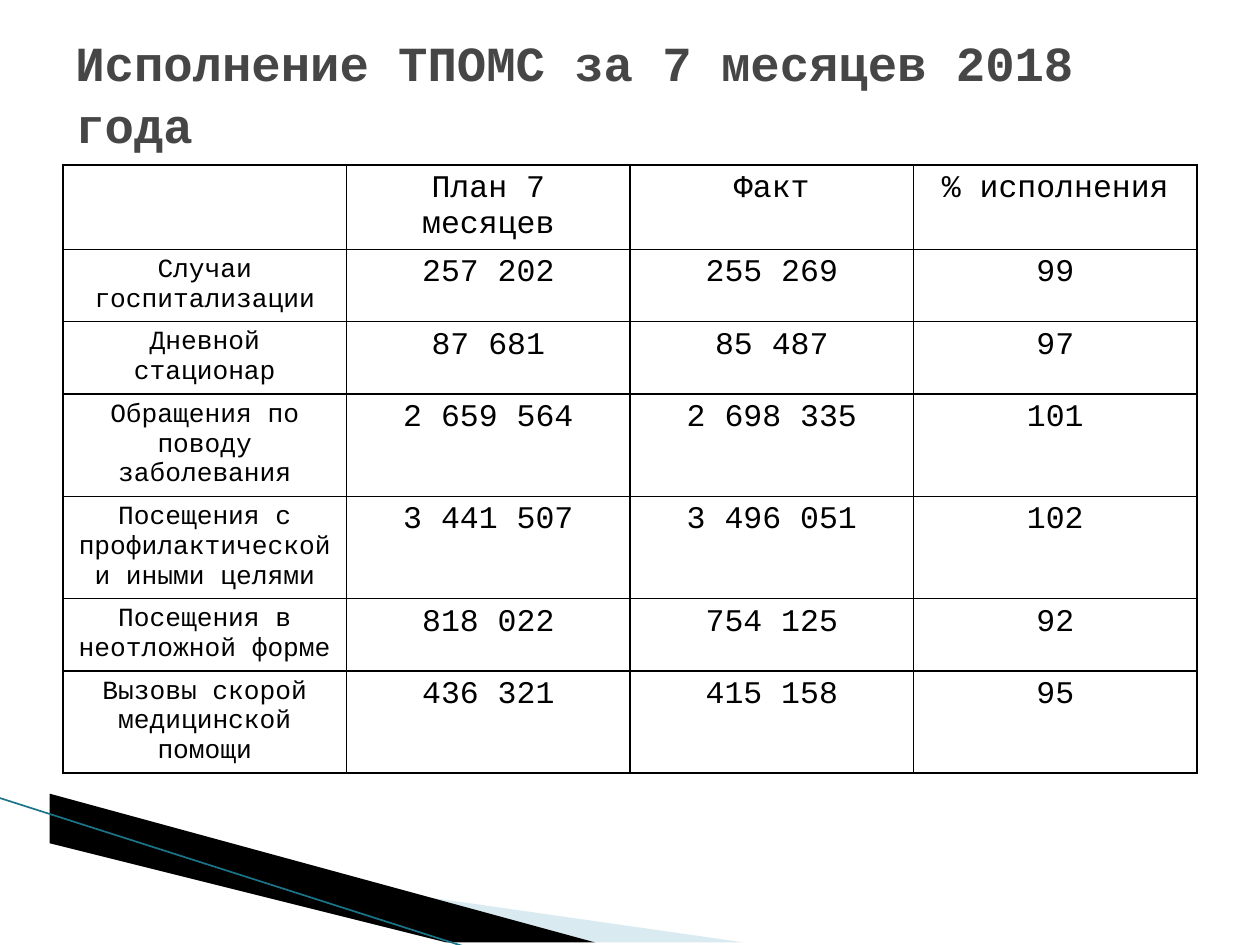
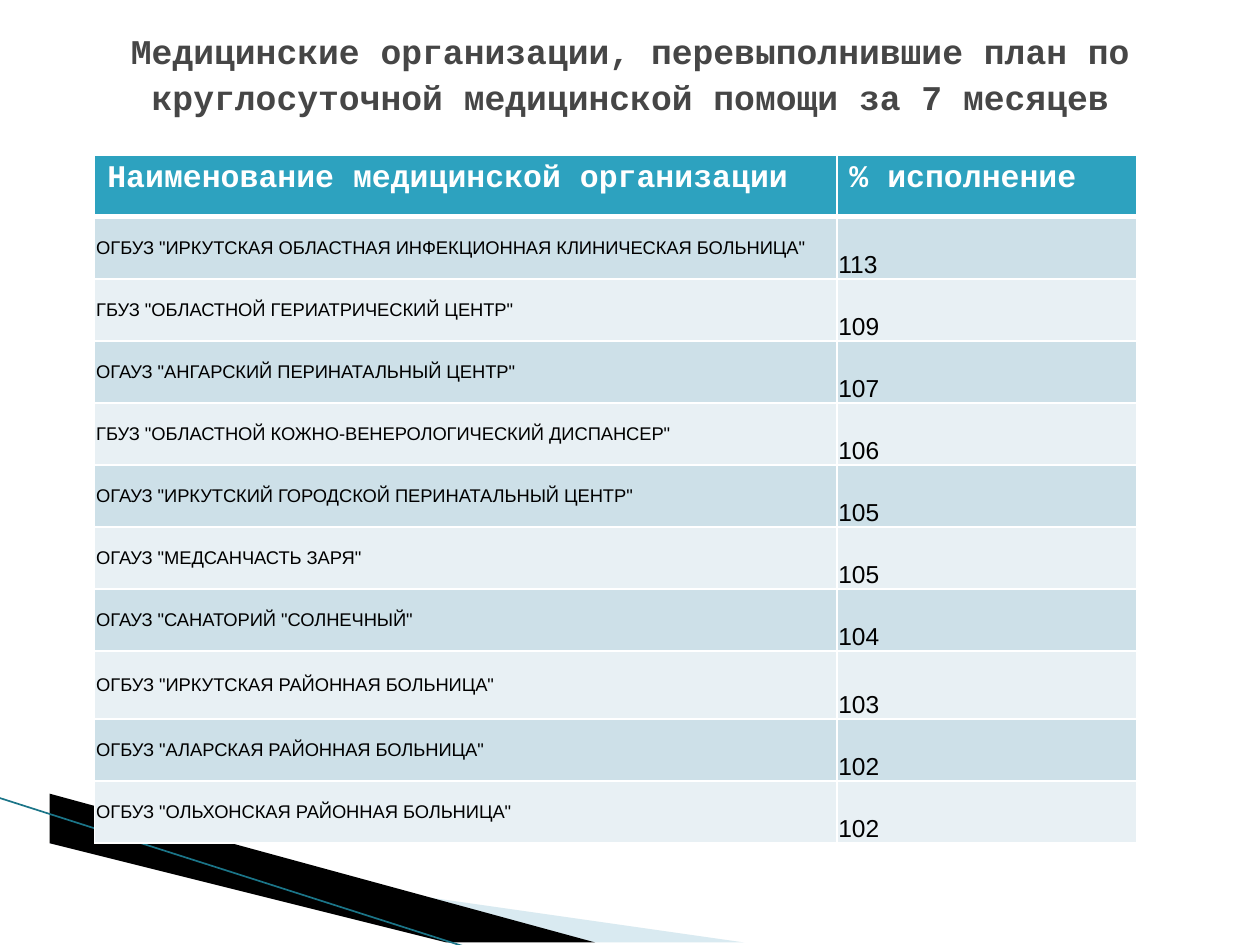
import pptx
import pptx.dml.color
import pptx.enum.shapes
import pptx.enum.text
import pptx.oxml.ns
import pptx.util
from lxml import etree

Cm = pptx.util.Cm
Pt = pptx.util.Pt
RGBColor = pptx.dml.color.RGBColor
Align = pptx.enum.text.PP_ALIGN
Anchor = pptx.enum.text.MSO_ANCHOR
qn = pptx.oxml.ns.qn

BLACK = RGBColor(0x00, 0x00, 0x00)
WHITE = RGBColor(0xFF, 0xFF, 0xFF)
TITLE_GREY = RGBColor(0x46, 0x46, 0x46)
PALE_BLUE = RGBColor(0xA0, 0xCB, 0xDC)
EDGE_TEAL = RGBColor(0x1B, 0x75, 0x88)
HEADER_TEAL = RGBColor(0x2D, 0xA2, 0xBF)
BAND_DARK = RGBColor(0xCD, 0xE0, 0xE8)
BAND_LIGHT = RGBColor(0xE8, 0xF0, 0xF4)

MONO = "Courier New"
SANS = "Arial"

PALE_WEDGE = [(1.4, 16.53), (15.11, 19.08), (11.58, 19.08), (1.4, 16.51)]
BLACK_WEDGE = [(1.35, 16.48), (11.61, 19.08), (9.45, 19.1), (1.37, 16.51)]

PLAN_HEADER = ["", "План 7 месяцев", "Факт", "% исполнения"]
PLAN_ROWS = [
    ("Случаи госпитализации", "257 202", "255 269", "99"),
    ("Дневной стационар", "87 681", "85 487", "97"),
    ("Обращения по поводу заболевания", "2 659 564", "2 698 335", "101"),
    ("Посещения с профилактической и иными целями", "3 441 507", "3 496 051", "102"),
    ("Посещения в неотложной форме", "818 022", "754 125", "92"),
    ("Вызовы скорой медицинской помощи", "436 321", "415 158", "95"),
]
PLAN_HEIGHTS = [1.69, 1.46, 1.46, 2.06, 2.06, 1.46, 2.06]

HOSPITAL_HEADER = ["Наименование медицинской организации", "% исполнение"]
HOSPITAL_ROWS = [
    ('ОГБУЗ "ИРКУТСКАЯ ОБЛАСТНАЯ ИНФЕКЦИОННАЯ КЛИНИЧЕСКАЯ БОЛЬНИЦА"', "113"),
    ('ГБУЗ "ОБЛАСТНОЙ ГЕРИАТРИЧЕСКИЙ ЦЕНТР"', "109"),
    ('ОГАУЗ "АНГАРСКИЙ ПЕРИНАТАЛЬНЫЙ ЦЕНТР"', "107"),
    ('ГБУЗ "ОБЛАСТНОЙ КОЖНО-ВЕНЕРОЛОГИЧЕСКИЙ ДИСПАНСЕР"', "106"),
    ('ОГАУЗ "ИРКУТСКИЙ ГОРОДСКОЙ ПЕРИНАТАЛЬНЫЙ ЦЕНТР"', "105"),
    ('ОГАУЗ "МЕДСАНЧАСТЬ ЗАРЯ"', "105"),
    ('ОГАУЗ "САНАТОРИЙ "СОЛНЕЧНЫЙ"', "104"),
    ('ОГБУЗ "ИРКУТСКАЯ РАЙОННАЯ БОЛЬНИЦА"', "103"),
    ('ОГБУЗ "АЛАРСКАЯ РАЙОННАЯ БОЛЬНИЦА"', "102"),
    ('ОГБУЗ "ОЛЬХОНСКАЯ РАЙОННАЯ БОЛЬНИЦА"', "102"),
]
HOSPITAL_HEIGHTS = [1.25] * 8 + [1.37] + [1.25] * 2


def write(frame, text, size, font, color, bold=False, align=Align.LEFT):
    """Write one styled run into the first paragraph of a text frame."""
    paragraph = frame.paragraphs[0]
    paragraph.alignment = align
    run = paragraph.add_run()
    run.text = text
    run.font.size = Pt(size)
    run.font.name = font
    run.font.bold = bold
    run.font.color.rgb = color
    return paragraph


def add_wedge(slide, corners, color, opacity=100):
    """Draw a filled outline through corners given in centimetres."""
    builder = slide.shapes.build_freeform(*corners[0], scale=Cm(1))
    builder.add_line_segments(corners[1:], close=True)
    wedge = builder.convert_to_shape()
    wedge.shadow.inherit = False
    wedge.fill.solid()
    wedge.fill.fore_color.rgb = color
    wedge.line.fill.background()
    if opacity < 100:
        tint = wedge.fill._xPr.find(".//" + qn("a:srgbClr"))
        etree.SubElement(tint, qn("a:alpha"), val=str(opacity * 1000))


def add_corner_sweep(slide):
    """Draw the swept decoration in the lower left corner."""
    add_wedge(slide, PALE_WEDGE, PALE_BLUE, opacity=40)
    add_wedge(slide, BLACK_WEDGE, BLACK)
    edge = slide.shapes.add_connector(
        pptx.enum.shapes.MSO_CONNECTOR.STRAIGHT, Cm(-0.03), Cm(16.08), Cm(9.42), Cm(19.1))
    edge.line.color.rgb = EDGE_TEAL
    edge.line.width = Pt(0.95)
    etree.SubElement(edge._element.spPr, qn("a:effectLst"))


def add_title(slide, text, height, size, align, spacing):
    """Place the slide title across the top."""
    title = slide.shapes.add_textbox(Cm(1.27), Cm(0.76), Cm(22.86), Cm(height))
    title.text_frame.word_wrap = True
    title.text_frame.vertical_anchor = Anchor.MIDDLE
    paragraph = write(title.text_frame, text, size, MONO, TITLE_GREY, True, align)
    paragraph.line_spacing = spacing


def set_borders(cell, color, top=1, bottom=1):
    """Rule all four sides of a cell, with widths in points."""
    properties = cell._tc.get_or_add_tcPr()
    for side, width in (("L", 1), ("R", 1), ("T", top), ("B", bottom)):
        rule = etree.SubElement(properties, qn("a:ln" + side), w=str(Pt(width)))
        fill = etree.SubElement(rule, qn("a:solidFill"))
        etree.SubElement(fill, qn("a:srgbClr"), val=str(color))


def add_grid(slide, left, top, widths, heights):
    """Add an unbanded table with the given column widths and row heights."""
    grid = slide.shapes.add_table(
        len(heights), len(widths), Cm(left), Cm(top), Cm(sum(widths)), Cm(sum(heights))).table
    grid.first_row = False
    grid.horz_banding = False
    for column, width in zip(grid.columns, widths):
        column.width = Cm(width)
    for row, height in zip(grid.rows, heights):
        row.height = Cm(height)
    return grid


def add_plan_table(slide, left, top, width):
    """Compare the plan with the result for each kind of care."""
    count = len(PLAN_HEADER)
    grid = add_grid(slide, left, top, [width / count] * count, PLAN_HEIGHTS)
    for r, values in enumerate([PLAN_HEADER, *PLAN_ROWS]):
        for c, value in enumerate(values):
            cell = grid.cell(r, c)
            set_borders(cell, BLACK)
            cell.fill.background()
            if value:
                write(cell.text_frame, value, 18 if c else 15, MONO, BLACK, align=Align.CENTER)


def add_hospital_table(slide, left, top, widths):
    """List the hospitals that exceeded the plan."""
    grid = add_grid(slide, left, top, widths, HOSPITAL_HEIGHTS)
    for r, values in enumerate([HOSPITAL_HEADER, *HOSPITAL_ROWS]):
        for c, value in enumerate(values):
            cell = grid.cell(r, c)
            set_borders(cell, WHITE, top=3 if r == 1 else 1, bottom=1 if r else 3)
            cell.fill.solid()
            if r == 0:
                cell.fill.fore_color.rgb = HEADER_TEAL
                write(cell.text_frame, value, 18, MONO, WHITE, bold=True)
                continue
            cell.fill.fore_color.rgb = BAND_DARK if r % 2 else BAND_LIGHT
            cell.margin_left = cell.margin_right = cell.margin_top = Cm(0.03)
            cell.margin_bottom = 0
            cell.vertical_anchor = Anchor.BOTTOM if c else Anchor.MIDDLE
            write(cell.text_frame, value, 14 if c else 10.5, SANS, BLACK)


def add_base_slide(deck):
    """Add a blank slide with the shared decoration."""
    slide = deck.slides.add_slide(deck.slide_layouts[6])
    add_corner_sweep(slide)
    return slide


def main():
    """Build both slides and save the deck."""
    deck = pptx.Presentation()
    deck.slide_width, deck.slide_height = Cm(25.4), Cm(19.05)

    plan = add_base_slide(deck)
    add_plan_table(plan, 1.27, 3.33, 22.86)
    add_title(plan, "Исполнение ТПОМС за 7 месяцев 2018 года", 2.16, 28, Align.LEFT, 1.06)

    hospitals = add_base_slide(deck)
    add_title(
        hospitals,
        "Медицинские организации, перевыполнившие план по "
        "круглосуточной медицинской помощи за 7 месяцев",
        1.37, 19.8, Align.CENTER, 1.09)
    add_hospital_table(hospitals, 1.91, 3.12, [14.96, 6.05])

    deck.save("out.pptx")


if __name__ == "__main__":
    main()
